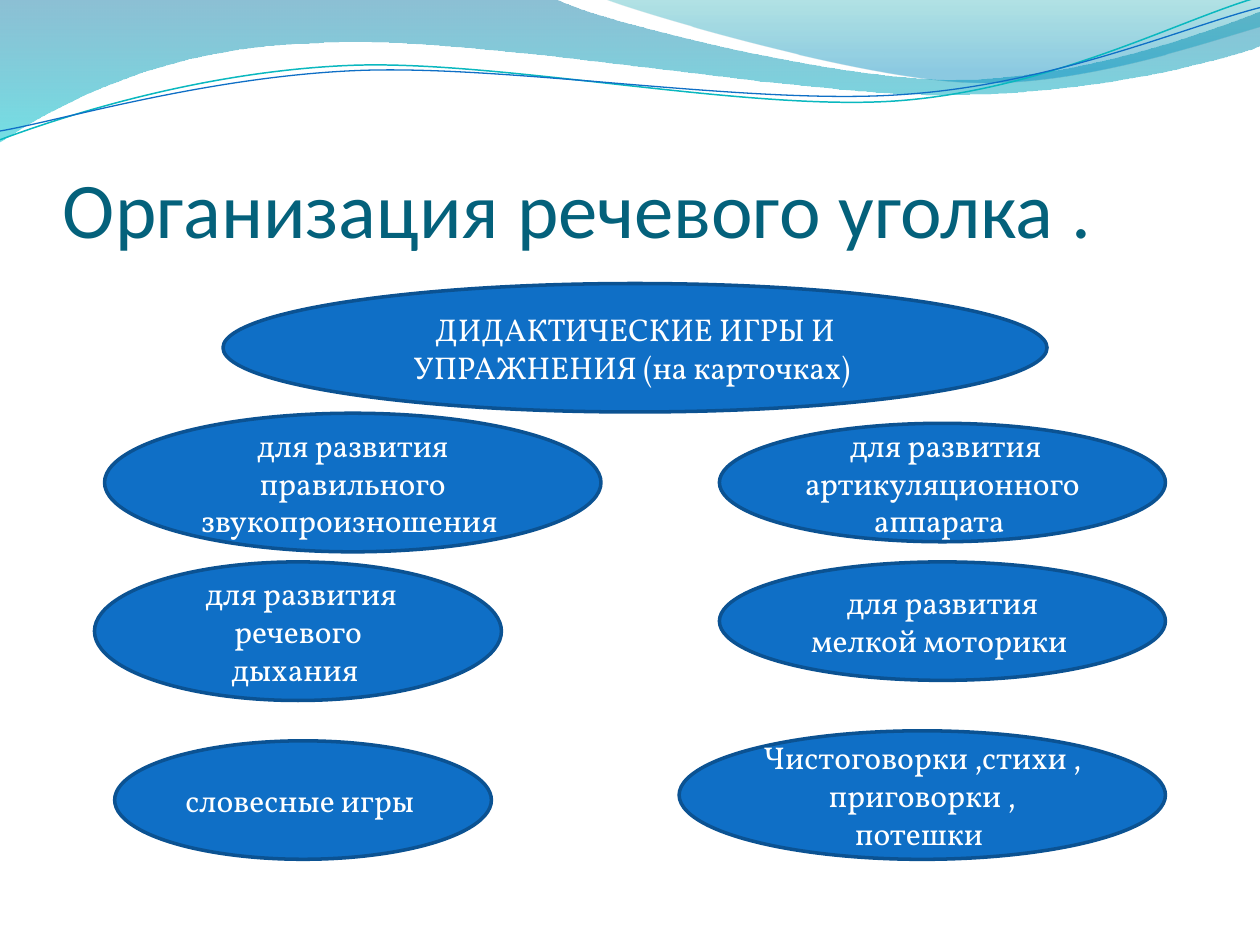
from math import cos, radians, sin

from lxml import etree
from pptx import Presentation
from pptx.dml.color import RGBColor
from pptx.enum.shapes import MSO_SHAPE
from pptx.enum.text import MSO_ANCHOR, PP_ALIGN
from pptx.oxml import parse_xml
from pptx.oxml.ns import qn
from pptx.util import Inches, Pt

THEME = {
    "title": ("Calibri", 45, "04617B"),
    "body": ("Vollkorn", 18, "FFFFFF"),
    "fill": "0F6FC6",
    "outline": "0B5292",
    "outline_width": 2,
}

NBSP = chr(160)
TITLE = f"Организация речевого уголка{NBSP}."

OVALS = [
    (f"ДИДАКТИЧЕСКИЕ ИГРЫ И УПРАЖНЕНИЯ (на карточках){NBSP}", 1.77, 2.25, 6.54, 1.02),
    ("для развития правильного звукопроизношения ", 0.83, 3.28, 3.94, 1.1),
    (f"{NBSP}для развития речевого дыхания{NBSP}", 0.75, 4.46, 3.23, 1.1),
    (f"словесные игры{NBSP}", 0.91, 5.88, 2.99, 0.94),
    (f"{NBSP}для развития артикуляционного аппарата{NBSP}", 5.71, 3.36, 3.54, 0.94),
    (f"для развития мелкой моторики{NBSP}", 5.71, 4.46, 3.54, 0.94),
    (f"Чистоговорки ,стихи , приговорки , потешки{NBSP}", 5.39, 5.8, 3.86, 1.02),
]

BANDS = [
    ((-0.01, -0.01, 10.02, 1.14),
     [(0, 0), (4.4, -0.01),
      (4.76, 0.17, 6.64, 0.63, 7.58, 0.63), (8.53, 0.63, 9.58, 0.26, 10, 0.09),
      (10.01, 0.36),
      (9.83, 0.44, 8.7, 0.76, 7.46, 0.75), (6.22, 0.75, 3.82, 0.28, 2.57, 0.34),
      (1.29, 0.36, 0.46, 0.83, -0.01, 1.13), (0, 0)],
     [(0, "0074A1", 45), (100, "00C6CF", 55)]),
    ((4.79, -0.01, 5.21, 0.7),
     [(4.79, -0.01),
      (5.09, 0.11, 6.82, 0.62, 7.69, 0.65), (8.56, 0.69, 9.61, 0.32, 10, 0.21),
      (10, 0), (4.79, -0.01)],
     [(0, "00A1A9", 30), (80, "008BBF", 45)]),
]

STRAND_ANGLE = 357.3
STRANDS = [
    ((-0.02, 0.22, 10.02, 0.71),
     [(0, 1.11), (0.48, 0.93, 1.58, 0.57, 2.77, 0.52),
      (3.95, 0.47, 5.93, 0.89, 7.13, 0.8), (8.33, 0.71, 9.38, 0.15, 9.98, -0.02)],
     "0AB8BF", 0.85),
    ((-0.02, 0.3, 10.03, 0.58),
     [(0, 1.04), (0.47, 0.96, 1.64, 0.61, 2.83, 0.56),
      (4.03, 0.51, 5.97, 0.84, 7.17, 0.75), (8.36, 0.67, 9.41, 0.21, 10, 0.06)],
     "0F6FC6", 0.75),
]


def rgb(value):
    return RGBColor.from_string(value)


def to_local(x, y, box, angle):
    left, top, width, height = box
    dx, dy = x - left - width / 2, y - top - height / 2
    c, n = cos(radians(-angle)), sin(radians(-angle))
    return Inches(width / 2 + dx * c - dy * n), Inches(height / 2 + dx * n + dy * c)


def add_curve(shapes, box, segments, close, angle=0):
    start, *rest = [(Inches(seg[-2]), Inches(seg[-1])) for seg in segments]
    fb = shapes.build_freeform(*start)
    fb.add_line_segments(rest, close=close)
    sp = fb.convert_to_shape()
    sp.left, sp.top, sp.width, sp.height = map(Inches, box)
    sp.rotation = angle
    sp.shadow.inherit = False
    sp.fill.background()
    path = next(sp.element.iter(qn("a:path")))
    for child in list(path):
        path.remove(child)
    path.set("w", str(sp.width))
    path.set("h", str(sp.height))
    for i, seg in enumerate(segments):
        tag = "a:moveTo" if i == 0 else "a:lnTo" if len(seg) == 2 else "a:cubicBezTo"
        step = etree.SubElement(path, qn(tag))
        for x, y in zip(seg[::2], seg[1::2]):
            px, py = to_local(x, y, box, angle)
            etree.SubElement(step, qn("a:pt"), x=str(px), y=str(py))
    if close:
        etree.SubElement(path, qn("a:close"))
    return sp


def set_gradient(sp, stops):
    grad = parse_xml(
        '<a:gradFill xmlns:a="http://schemas.openxmlformats.org/drawingml/2006/main"'
        ' rotWithShape="1"><a:gsLst/><a:lin ang="5400000" scaled="0"/></a:gradFill>')
    for pos, color, alpha in stops:
        gs = etree.SubElement(grad[0], qn("a:gs"), pos=str(pos * 1000))
        clr = etree.SubElement(gs, qn("a:srgbClr"), val=color)
        etree.SubElement(clr, qn("a:alpha"), val=str(alpha * 1000))
    sp_pr = sp.element.spPr
    sp_pr.replace(sp_pr.find(qn("a:noFill")), grad)


def set_line(sp, color, width):
    sp.line.color.rgb = rgb(color)
    sp.line.width = Pt(width)


def write(tf, text, style, align, anchor):
    tf.word_wrap = True
    tf.vertical_anchor = anchor
    tf.text = text
    p = tf.paragraphs[0]
    p.alignment = align
    font = p.runs[0].font
    name, size, color = THEME[style]
    font.name, font.size, font.color.rgb = name, Pt(size), rgb(color)


def add_title(s):
    tf = s.shapes.add_textbox(Inches(0.5), Inches(0.77), Inches(9), Inches(1.25)).text_frame
    tf.margin_left = tf.margin_right = tf.margin_bottom = 0
    tf.margin_top = Inches(0.05)
    write(tf, TITLE, "title", PP_ALIGN.LEFT, MSO_ANCHOR.BOTTOM)


def add_oval(s, text, *box):
    sp = s.shapes.add_shape(MSO_SHAPE.OVAL, *map(Inches, box))
    sp.shadow.inherit = False
    sp.fill.solid()
    sp.fill.fore_color.rgb = rgb(THEME["fill"])
    set_line(sp, THEME["outline"], THEME["outline_width"])
    write(sp.text_frame, text, "body", PP_ALIGN.CENTER, MSO_ANCHOR.MIDDLE)


def main():
    prs = Presentation()
    prs.slide_width, prs.slide_height = Inches(10), Inches(7.5)
    s = prs.slides.add_slide(prs.slide_layouts[6])
    for box, segments, stops in BANDS:
        band = add_curve(s.shapes, box, segments, True)
        band.line.fill.background()
        set_gradient(band, stops)
    strands = s.shapes.add_group_shape()
    for box, segments, color, width in STRANDS:
        strand = add_curve(strands.shapes, box, segments, False, STRAND_ANGLE)
        set_line(strand, color, width)
    add_title(s)
    for oval in OVALS:
        add_oval(s, *oval)
    prs.save("out.pptx")


if __name__ == "__main__":
    main()
